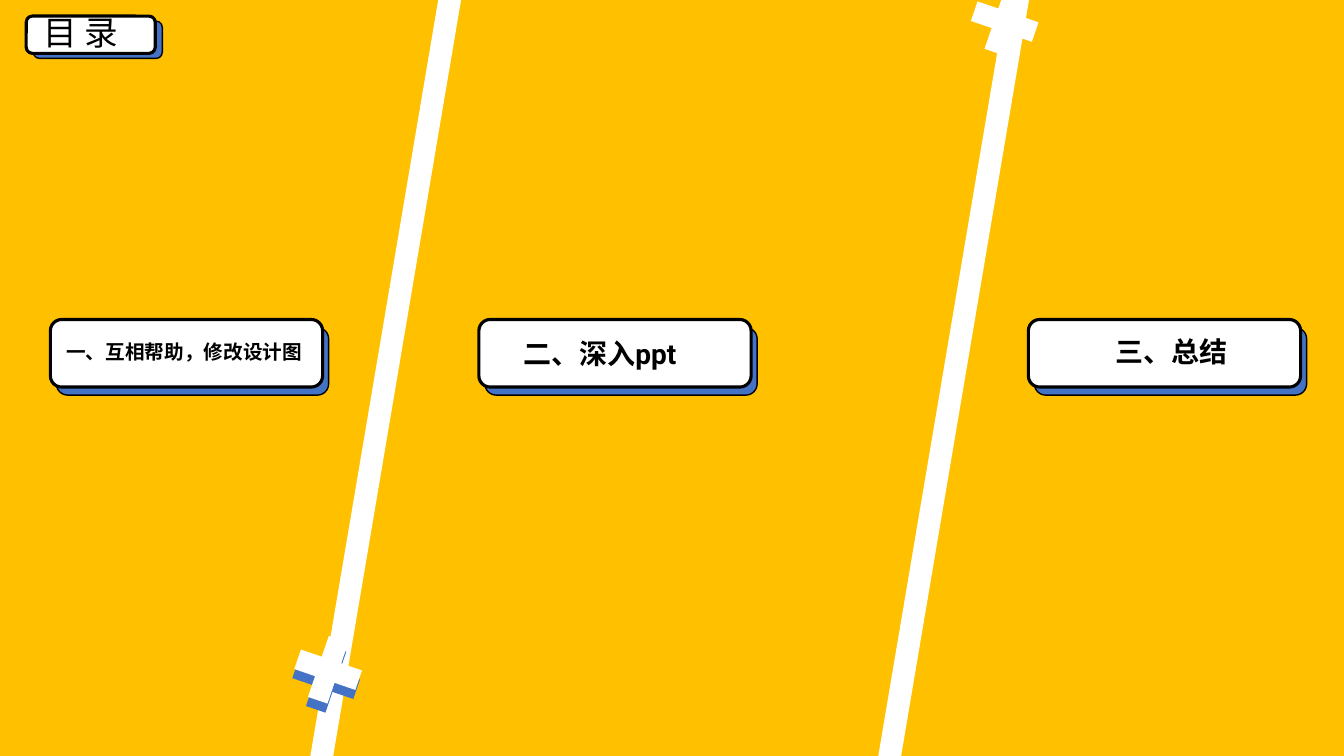
from pptx import Presentation
from pptx.dml.color import RGBColor
from pptx.enum.shapes import MSO_SHAPE as SHAPE
from pptx.enum.text import MSO_ANCHOR as ANCHOR, MSO_AUTO_SIZE as AUTO_SIZE, PP_ALIGN as ALIGN
from pptx.util import Inches, Pt

AMBER = RGBColor(0xFF, 0xC0, 0x00)
BLUE = RGBColor(0x44, 0x72, 0xC4)
BLACK = RGBColor(0, 0, 0)
WHITE = RGBColor(0xFF, 0xFF, 0xFF)
FONT = "Roboto"
WIDTH, HEIGHT = 13.33, 7.5
CARD_W, CARD_H, CARD_TOP = 2.7, 0.67, 3.17
PLUS_SIZE, PLUS_TILT = 0.87, 18.9


def add_box(s, kind, x, y, w, h, fill, line=None, weight=1, rotation=0):
    sp = s.shapes.add_shape(kind, Inches(x), Inches(y), Inches(w), Inches(h))
    sp.shadow.inherit = False
    sp.rotation = rotation
    sp.fill.solid()
    sp.fill.fore_color.rgb = fill
    if line is None:
        sp.line.fill.background()
    else:
        sp.line.color.rgb = line
        sp.line.width = Pt(weight)


def add_plate(s, x, y, w, h, dx, dy):
    add_box(s, SHAPE.ROUNDED_RECTANGLE, x + dx, y + dy, w, h, BLUE, BLACK)
    add_box(s, SHAPE.ROUNDED_RECTANGLE, x, y, w, h, WHITE, BLACK, 2.25)


def write(sp, text, size, bold, align=ALIGN.LEFT):
    tf = sp.text_frame
    tf.word_wrap = True
    tf.auto_size = AUTO_SIZE.SHAPE_TO_FIT_TEXT
    tf.vertical_anchor = ANCHOR.TOP
    p = tf.paragraphs[0]
    p.text = text
    p.alignment = align
    p.font.name = FONT
    p.font.size = Pt(size)
    p.font.bold = bold
    p.font.color.rgb = BLACK


def add_title(s, x, y, w, h):
    add_plate(s, x, y, w, h, 0.07, 0.05)
    title = s.shapes.title
    title.left, title.top = Inches(x + 0.07), Inches(y - 0.09)
    title.width, title.height = Inches(w), Inches(0.5)
    title.element.getparent().append(title.element)
    write(title, "目 录", 24, False)


def add_card(s, x, y, text, size, dx, dy, h, align):
    add_plate(s, x, y, CARD_W, CARD_H, 0.06, 0.08)
    sp = s.shapes.add_textbox(Inches(x + dx), Inches(y + dy), Inches(CARD_W), Inches(h))
    write(sp, text, size, True, align)


def add_stripe(s, x, y):
    add_box(s, SHAPE.RECTANGLE, x, y, 8.54, 0.21, WHITE, WHITE, rotation=279.6)


def add_plus(s, x, y, fill):
    add_box(s, SHAPE.MATH_PLUS, x, y, PLUS_SIZE, PLUS_SIZE, fill, rotation=PLUS_TILT)


def add_contents(prs):
    s = prs.slides.add_slide(prs.slide_layouts[5])
    add_box(s, SHAPE.RECTANGLE, 0, 0, WIDTH, HEIGHT, AMBER, AMBER)
    add_title(s, 0.26, 0.16, 1.28, 0.37)
    add_stripe(s, -0.44, 3.62)
    add_plus(s, 2.8, 6.3, BLUE)
    add_plus(s, 2.82, 6.21, WHITE)
    add_stripe(s, 5.14, 3.93)
    add_plus(s, 9.53, -0.22, WHITE)
    cards = [
        (0.5, "一、互相帮助，修改设计图", 14, 0.06, 0.15, 0.34, ALIGN.LEFT),
        (4.75, "二、深入ppt", 20, 0.34, 0.12, 0.44, ALIGN.LEFT),
        (10.2, "三、总结", 20, 0.07, 0.1, 0.44, ALIGN.CENTER),
    ]
    for x, *label in cards:
        add_card(s, x, CARD_TOP, *label)


def main():
    prs = Presentation()
    prs.slide_width, prs.slide_height = Inches(WIDTH), Inches(HEIGHT)
    add_contents(prs)
    prs.save("out.pptx")


if __name__ == "__main__":
    main()
